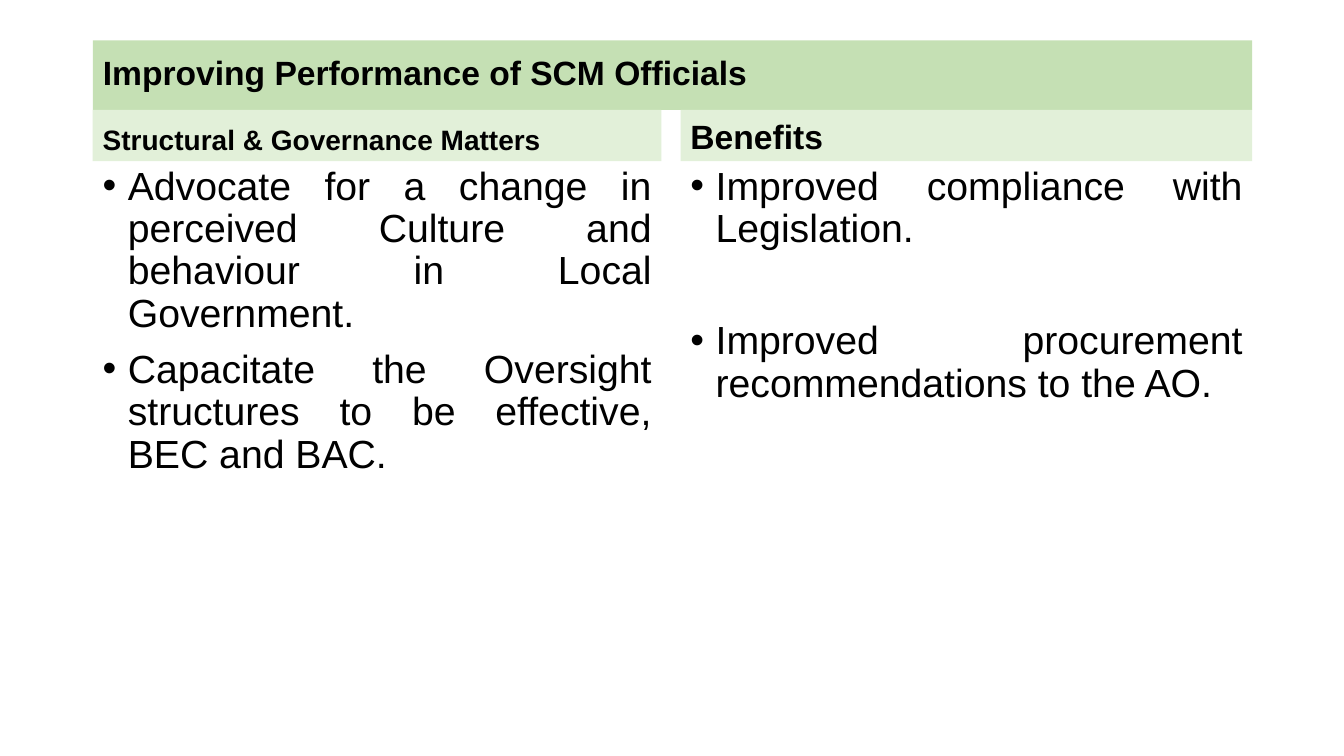
from lxml import etree
from pptx import Presentation
from pptx.dml.color import RGBColor
from pptx.enum.text import MSO_ANCHOR, MSO_AUTO_SIZE, PP_ALIGN
from pptx.util import Inches, Pt

TOP, MIDDLE, BOTTOM = MSO_ANCHOR.TOP, MSO_ANCHOR.MIDDLE, MSO_ANCHOR.BOTTOM
LEFT, JUSTIFY = PP_ALIGN.LEFT, PP_ALIGN.JUSTIFY
NO_AUTOFIT = MSO_AUTO_SIZE.NONE
DRAWING = "{http://schemas.openxmlformats.org/drawingml/2006/main}"


def set_up_box(box, left, top, width, height, anchor, fill=None):
    box.left, box.top = Inches(left), Inches(top)
    box.width, box.height = Inches(width), Inches(height)
    if fill:
        box.fill.solid()
        box.fill.fore_color.rgb = RGBColor.from_string(fill)
    frame = box.text_frame
    frame.word_wrap = True
    frame.auto_size = NO_AUTOFIT
    frame.vertical_anchor = anchor
    return frame


def write(para, text, size, bold=False, align=LEFT, before=10, bullet=False):
    para.alignment = align
    para.line_spacing = 0.9
    para.space_before = Pt(before)
    if bullet:
        properties = para._p.get_or_add_pPr()
        properties.set("marL", str(Inches(0.25)))
        properties.set("indent", str(Inches(-0.25)))
        etree.SubElement(properties, DRAWING + "buFont", typeface="Arial")
        etree.SubElement(properties, DRAWING + "buChar", char="•")
    span = para.add_run()
    span.text = text
    span.font.name = "Arial"
    span.font.size = Pt(size)
    span.font.bold = bold
    span.font.color.rgb = RGBColor.from_string("000000")


deck = Presentation()
deck.slide_width, deck.slide_height = Inches(13.33), Inches(7.5)
page = deck.slides.add_slide(deck.slide_layouts[5])

title = set_up_box(page.shapes.title, 0.92, 0.4, 11.5, 0.69, MIDDLE, "C5E0B4")
write(title.paragraphs[0], "Improving Performance of SCM Officials", 24, bold=True, before=0)

# Each column: left, width, heading, heading size, points with space before
columns = [
    (0.92, 5.64, "Structural & Governance Matters", 20, [
        ("Advocate for a change in perceived Culture and behaviour in Local Government.", 10),
        ("Capacitate the Oversight structures to be effective, BEC and BAC.", 10),
    ]),
    (6.75, 5.67, "Benefits", 24, [
        ("Improved compliance with Legislation.", 10),
        ("Improved procurement recommendations to the AO.", 50),
    ]),
]
for left, width, heading, heading_size, points in columns:
    heading_box = page.shapes.add_textbox(0, 0, 0, 0)
    frame = set_up_box(heading_box, left, 1.09, width, 0.51, BOTTOM, "E2F0D9")
    write(frame.paragraphs[0], heading, heading_size, bold=True)

    points_box = page.shapes.add_textbox(0, 0, 0, 0)
    frame = set_up_box(points_box, left, 1.6, width, 5.17, TOP)
    for index, (point, before) in enumerate(points):
        para = frame.add_paragraph() if index else frame.paragraphs[0]
        write(para, point, 28, align=JUSTIFY, before=before, bullet=True)

deck.save("out.pptx")
